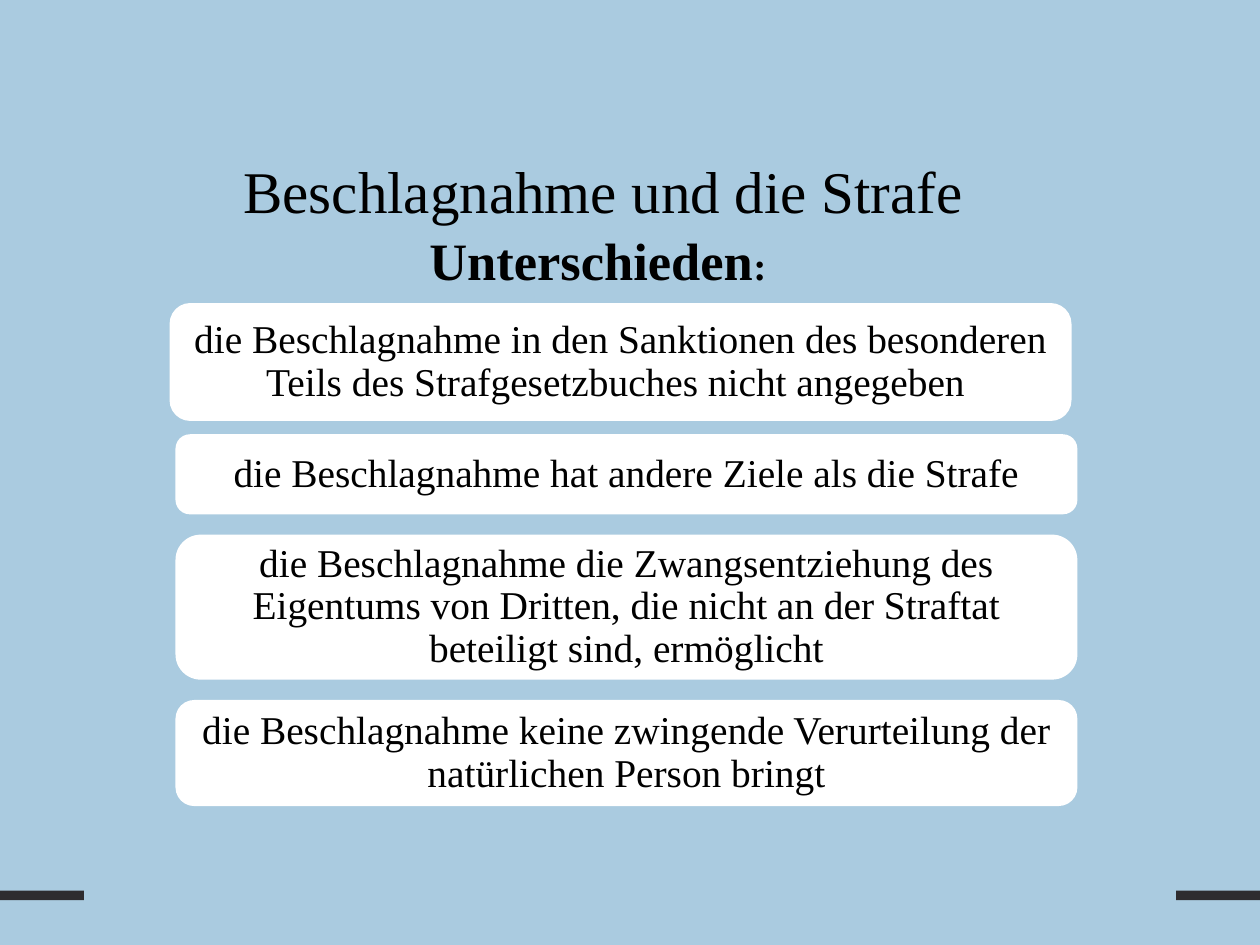
from pptx import Presentation
from pptx.dml.color import RGBColor
from pptx.enum.shapes import MSO_SHAPE
from pptx.enum.text import MSO_ANCHOR, PP_ALIGN
from pptx.util import Inches, Pt

RECT, ROUND = MSO_SHAPE.RECTANGLE, MSO_SHAPE.ROUNDED_RECTANGLE
CENTER = PP_ALIGN.CENTER
TOP, MIDDLE = MSO_ANCHOR.TOP, MSO_ANCHOR.MIDDLE

WIDTH, HEIGHT = 10.67, 8
FONT = "Times New Roman"
COLORS = {"back": "AACBE0", "bar": "2E2C2F", "card": "FFFFFF", "text": "000000"}

BAR_WIDTH = 0.71
CARD_LEFT, CARD_WIDTH = 1.5, 7.61
# Left shift, top, height and text of each card
CARDS = [
    (-0.05, 2.58, 0.97, "die Beschlagnahme in den Sanktionen des besonderen "
                        "Teils des Strafgesetzbuches nicht angegeben "),
    (0, 3.69, 0.65, "die Beschlagnahme hat andere Ziele als die Strafe"),
    (0, 4.54, 1.2, "die Beschlagnahme die Zwangsentziehung des Eigentums von "
                   "Dritten, die nicht an der Straftat beteiligt sind, ermöglicht"),
    (0, 5.94, 0.87, "die Beschlagnahme keine zwingende Verurteilung der "
                    "natürlichen Person bringt"),
]


def color(name):
    return RGBColor.from_string(COLORS[name])


def style(run, size, bold=False):
    run.font.name = FONT
    run.font.size = Pt(size)
    run.font.bold = bold
    run.font.color.rgb = color("text")


def add_block(slide, kind, box, fill):
    block = slide.shapes.add_shape(kind, *map(Inches, box))
    block.shadow.inherit = False
    block.fill.solid()
    block.fill.fore_color.rgb = color(fill)
    block.line.fill.background()
    return block


def add_card(slide, box, text):
    card = add_block(slide, ROUND, box, "card")
    card.line.color.rgb = color("card")
    card.line.width = Pt(2)
    frame = card.text_frame
    frame.word_wrap = True
    frame.vertical_anchor = MIDDLE
    frame.margin_left = frame.margin_right = Inches(0.1)
    frame.margin_top = frame.margin_bottom = Inches(0.1)
    frame.text = text
    line = frame.paragraphs[0]
    line.alignment = CENTER
    line.line_spacing = 0.9
    style(line.runs[0], 24)


def add_head(slide, box, parts):
    frame = slide.shapes.add_textbox(*map(Inches, box)).text_frame
    frame.word_wrap = True
    frame.vertical_anchor = TOP
    frame.margin_top = Inches(0.1)
    line = frame.paragraphs[0]
    line.alignment = CENTER
    for text, size, bold in parts:
        run = line.add_run()
        run.text = text
        style(run, size, bold)


def main():
    deck = Presentation()
    deck.slide_width, deck.slide_height = Inches(WIDTH), Inches(HEIGHT)
    slide = deck.slides.add_slide(deck.slide_layouts[6])
    slide.background.fill.solid()
    slide.background.fill.fore_color.rgb = color("back")

    # Bars at both edges
    for left in (0, WIDTH - BAR_WIDTH):
        add_block(slide, RECT, (left, 7.54, BAR_WIDTH, 0.08), "bar")

    # Title and subtitle
    add_head(slide, (0.61, 1.21, 9, 1.25),
             [("Beschlagnahme und die Strafe", 36, False)])
    add_head(slide, (0.5, 1.83, 9.21, 0.71),
             [("Unterschieden", 32, True), (": ", 24, True)])

    # Stack of cards
    for shift, top, height, text in CARDS:
        add_card(slide, (CARD_LEFT + shift, top, CARD_WIDTH, height), text)

    deck.save("out.pptx")


if __name__ == "__main__":
    main()
